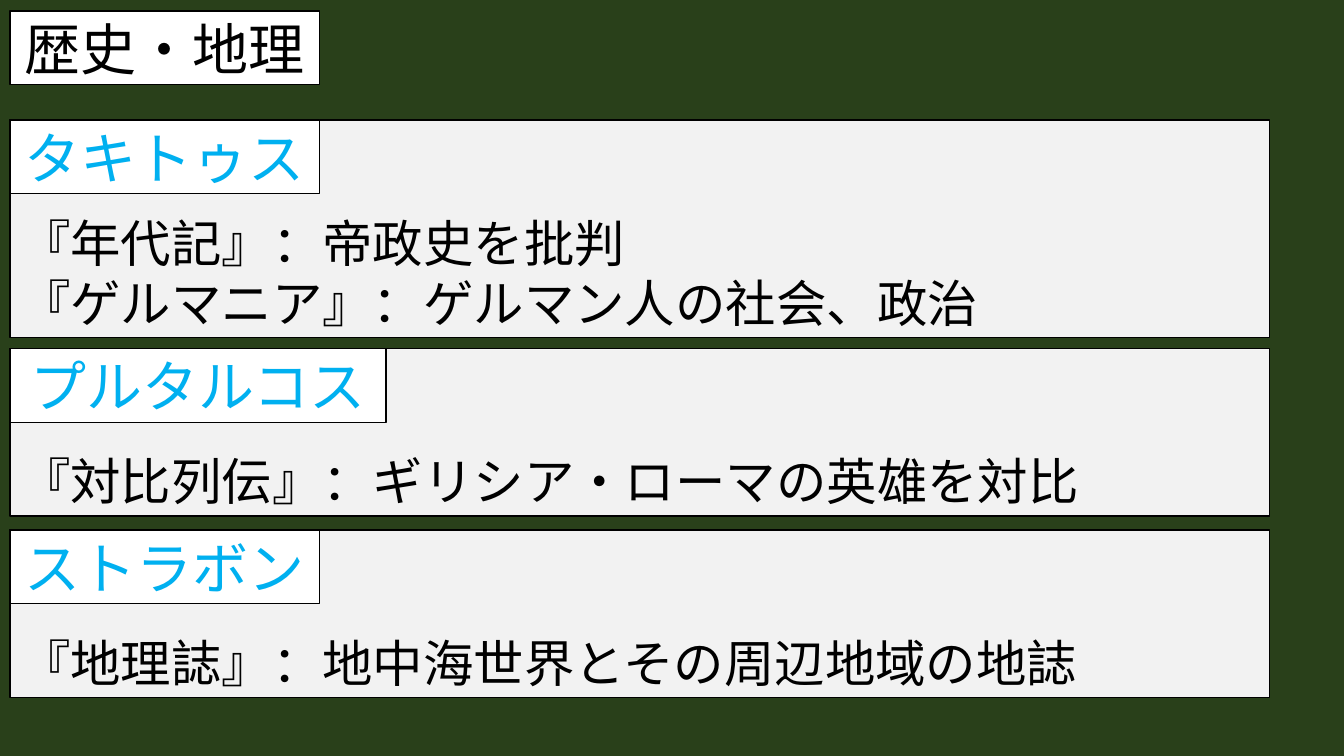
import pptx
import pptx.dml.color
import pptx.enum.shapes
import pptx.enum.text
import pptx.util
from lxml import etree

RGBColor = pptx.dml.color.RGBColor
ALIGN = pptx.enum.text.PP_ALIGN
ANCHOR = pptx.enum.text.MSO_ANCHOR
Inches = pptx.util.Inches

GREEN = RGBColor(0x29, 0x40, 0x1A)
WHITE = RGBColor(0xFF, 0xFF, 0xFF)
GREY = RGBColor(0xF2, 0xF2, 0xF2)
BLACK = RGBColor(0x00, 0x00, 0x00)
BLUE = RGBColor(0x00, 0xB0, 0xF0)

FONT = "Roboto"
LABEL_SIZE, BODY_SIZE = 40, 36
LEFT, TITLE_TOP = 0.1, 0.11
PANEL_WIDTH = 12.49
LABEL_WIDTH, WIDE_LABEL_WIDTH, LABEL_HEIGHT = 3.07, 3.73, 0.73

# Author, label width, panel top, panel height, works
AUTHORS = [
    ("タキトゥス", LABEL_WIDTH, 1.19, 2.16,
     ["『年代記』：帝政史を批判", "『ゲルマニア』：ゲルマン人の社会、政治"]),
    ("プルタルコス", WIDE_LABEL_WIDTH, 3.46, 1.66,
     ["『対比列伝』：ギリシア・ローマの英雄を対比"]),
    ("ストラボン", LABEL_WIDTH, 5.26, 1.66,
     ["『地理誌』：地中海世界とその周辺地域の地誌"]),
]


def add_run(paragraph, text, size, color):
    run = paragraph.add_run()
    run.text = text
    run.font.size = pptx.util.Pt(size)
    run.font.color.rgb = color
    run.font.name = FONT
    properties = run.font._element
    east_asian = etree.SubElement(properties, pptx.oxml.ns.qn("a:ea"))
    east_asian.set("typeface", FONT)


def place(shape, top, width, height):
    shape.left, shape.top = Inches(LEFT), Inches(top)
    shape.width, shape.height = Inches(width), Inches(height)


def format_box(shape, fill, lines, size, color, align, anchor):
    """Give a shape its fill, black outline and one paragraph per line."""
    shape.fill.solid()
    shape.fill.fore_color.rgb = fill
    shape.line.color.rgb = BLACK
    shape.line.width = pptx.util.Pt(1)
    frame = shape.text_frame
    frame.word_wrap = True
    frame.auto_size = pptx.enum.text.MSO_AUTO_SIZE.NONE
    frame.vertical_anchor = anchor
    for index, line in enumerate(lines):
        paragraph = frame.add_paragraph() if index else frame.paragraphs[0]
        paragraph.alignment = align
        add_run(paragraph, line, size, color)


def format_label(shape, text, color):
    format_box(shape, WHITE, [text], LABEL_SIZE, color, ALIGN.CENTER, ANCHOR.MIDDLE)


def add_rectangle(slide, top, width, height):
    shape = slide.shapes.add_shape(
        pptx.enum.shapes.MSO_SHAPE.RECTANGLE, 0, 0, 0, 0)
    shape.shadow.inherit = False
    place(shape, top, width, height)
    return shape


def add_author(slide, name, label_width, top, height, works):
    panel = add_rectangle(slide, top, PANEL_WIDTH, height)
    format_box(panel, GREY, works, BODY_SIZE, BLACK, ALIGN.LEFT, ANCHOR.BOTTOM)
    label = add_rectangle(slide, top, label_width, LABEL_HEIGHT)
    format_label(label, name, BLUE)


def main():
    presentation = pptx.Presentation()
    presentation.slide_width = Inches(13.33)
    presentation.slide_height = Inches(7.5)
    slide = presentation.slides.add_slide(presentation.slide_layouts[5])
    slide.background.fill.solid()
    slide.background.fill.fore_color.rgb = GREEN

    title = slide.shapes.title
    place(title, TITLE_TOP, LABEL_WIDTH, LABEL_HEIGHT)
    format_label(title, "歴史・地理", BLACK)
    for author in AUTHORS:
        add_author(slide, *author)
    presentation.save("out.pptx")


if __name__ == "__main__":
    main()
